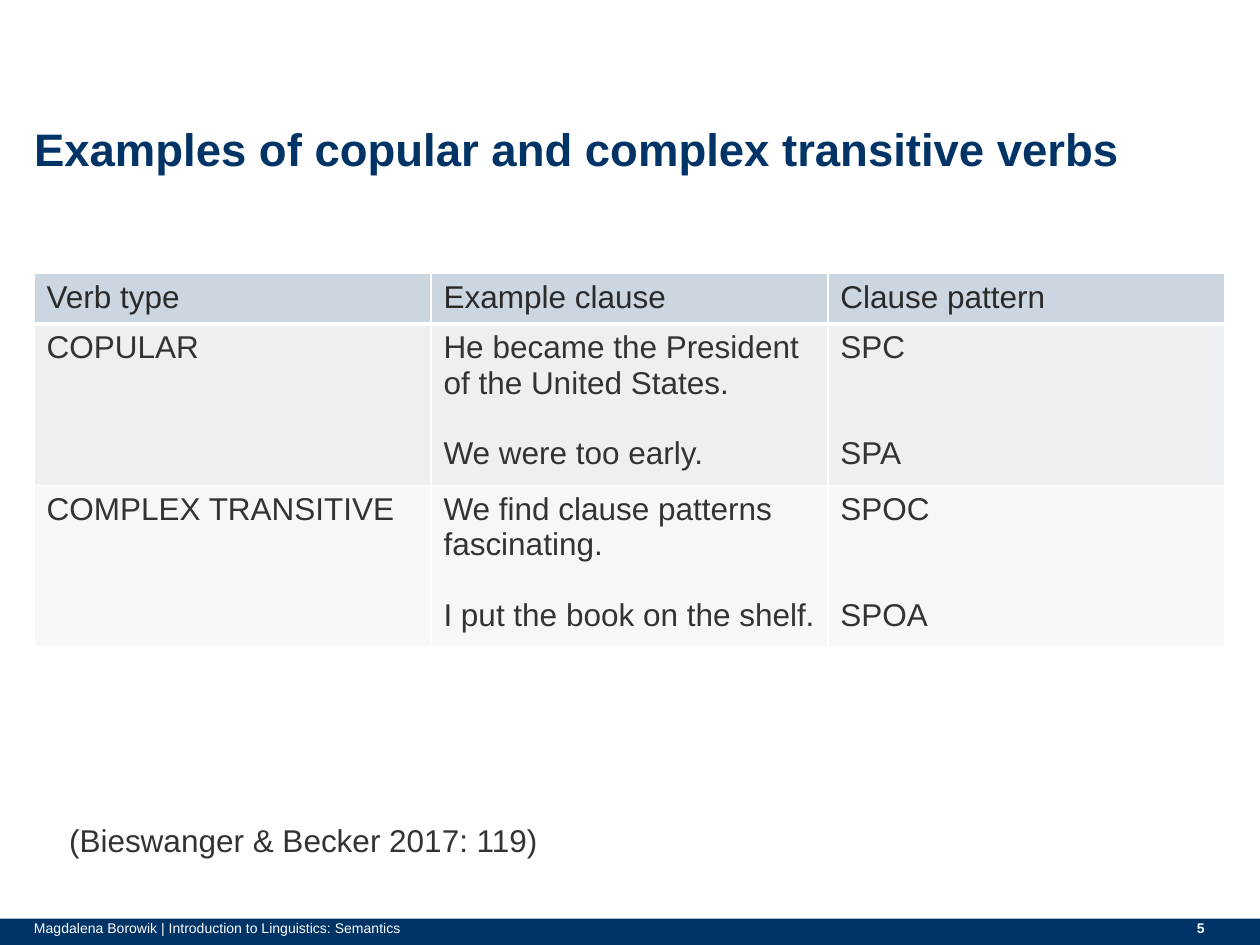
from lxml import etree
from pptx import Presentation
from pptx.dml.color import RGBColor
from pptx.enum.shapes import MSO_SHAPE
from pptx.enum.text import MSO_ANCHOR, PP_ALIGN
from pptx.oxml.ns import qn
from pptx.util import Inches, Pt

RECTANGLE = MSO_SHAPE.RECTANGLE
TOP = MSO_ANCHOR.TOP
LEFT, RIGHT = PP_ALIGN.LEFT, PP_ALIGN.RIGHT

COLORS = {
    "navy": "003366",
    "white": "FFFFFF",
    "header_text": "2A2A2A",
    "text": "333333",
    "header_fill": "CCD6E0",
    "copular_fill": "ECF0F3",
    "complex_fill": "F6F7F9",
}

TITLE = "Examples of copular and complex transitive verbs"
FOOTER = "Magdalena Borowik | Introduction to Linguistics: Semantics"
PAGE_NUMBER = "5"
SOURCE = "(Bieswanger & Becker 2017: 119)"

HEADERS = ["Verb type", "Example clause", "Clause pattern"]
VERB_ROWS = [
    (["COPULAR"],
     ["He became the President of the United States.", "We were too early."],
     ["SPC", "SPA"]),
    (["COMPLEX TRANSITIVE"],
     ["We find clause patterns fascinating.", "I put the book on the shelf."],
     ["SPOC", "SPOA"]),
]
ROW_FILLS = ["header_fill", "copular_fill", "complex_fill"]
ROW_HEIGHTS = [0.4, 1.22, 1.22]

MARGIN = 0.27
CONTENT_WIDTH = 9.45
LINE_POINTS = 20.25
# Blank lines before the second example, by column; they align with the clauses.
GAP_LINES = [0, 1, 2]


def write(frame, paragraphs, size=18, color="text", bold=False, align=LEFT,
          gap=0, line_spacing=None):
    """Fill a text frame; gap is the space in points before later paragraphs."""
    for index, text in enumerate(paragraphs):
        paragraph = frame.paragraphs[0] if index == 0 else frame.add_paragraph()
        paragraph.text = text
        paragraph.alignment = align
        if index:
            paragraph.space_before = Pt(gap)
        if line_spacing:
            paragraph.line_spacing = line_spacing
        font = paragraph.font
        font.name, font.size, font.bold = "Arial", Pt(size), bold
        font.color.rgb = RGBColor.from_string(COLORS[color])


def set_frame(frame, side, vertical, wrap=True):
    frame.word_wrap = wrap
    frame.vertical_anchor = TOP
    frame.margin_left = frame.margin_right = Inches(side)
    frame.margin_top = frame.margin_bottom = Inches(vertical)


def add_text(slide, text, box, side=0.1, wrap=True, **text_format):
    frame = slide.shapes.add_textbox(*map(Inches, box)).text_frame
    set_frame(frame, side, 0.05, wrap)
    write(frame, [text], **text_format)


def set_borders(cell, bottom_width=1, top_width=1):
    properties = cell._tc.get_or_add_tcPr()
    widths = {"a:lnL": 1, "a:lnR": 1, "a:lnT": top_width, "a:lnB": bottom_width}
    for position, (tag, width) in enumerate(widths.items()):
        line = etree.Element(qn(tag), w=str(Pt(width)))
        fill = etree.SubElement(line, qn("a:solidFill"))
        etree.SubElement(fill, qn("a:srgbClr"), val=COLORS["white"])
        properties.insert(position, line)


def add_verb_table(slide):
    rows = [[[header] for header in HEADERS], *VERB_ROWS]
    box = (MARGIN, 2.17, CONTENT_WIDTH, sum(ROW_HEIGHTS))
    table = slide.shapes.add_table(
        len(rows), len(HEADERS), *map(Inches, box)).table
    for column in table.columns:
        column.width = Inches(CONTENT_WIDTH / len(HEADERS))
    for row_index, row in enumerate(rows):
        table.rows[row_index].height = Inches(ROW_HEIGHTS[row_index])
        for column_index, paragraphs in enumerate(row):
            cell = table.cell(row_index, column_index)
            cell.fill.solid()
            cell.fill.fore_color.rgb = RGBColor.from_string(
                COLORS[ROW_FILLS[row_index]])
            write(cell.text_frame, paragraphs,
                  color="text" if row_index else "header_text",
                  gap=GAP_LINES[column_index] * LINE_POINTS)
            set_borders(cell, bottom_width=1 if row_index else 3,
                        top_width=3 if row_index == 1 else 1)


def add_footer_bar(slide):
    bar = slide.shapes.add_shape(
        RECTANGLE, *map(Inches, (0, 7.29, 10, 0.21)))
    bar.shadow.inherit = False
    bar.fill.solid()
    bar.fill.fore_color.rgb = RGBColor.from_string(COLORS["navy"])
    bar.line.fill.background()


def main():
    presentation = Presentation()
    presentation.slide_width = Inches(10)
    presentation.slide_height = Inches(7.5)
    slide = presentation.slides.add_slide(presentation.slide_layouts[5])

    add_footer_bar(slide)
    add_text(slide, PAGE_NUMBER, (8.32, 7.25, 1.34, 0.26), size=8,
             color="white", bold=True, align=RIGHT)

    title = slide.shapes.title
    title.left, title.top, title.width, title.height = map(
        Inches, (MARGIN, 1.03, CONTENT_WIDTH, 0.94))
    set_frame(title.text_frame, 0, 0)
    write(title.text_frame, [TITLE], size=26, color="navy", bold=True,
          line_spacing=0.85)

    add_verb_table(slide)
    add_text(slide, FOOTER, (MARGIN, 7.25, 6.54, 0.25), side=0, size=8,
             color="white")
    add_text(slide, SOURCE, (0.45, 6.47, 3.96, 0.4), wrap=False)
    presentation.save("out.pptx")


if __name__ == "__main__":
    main()
